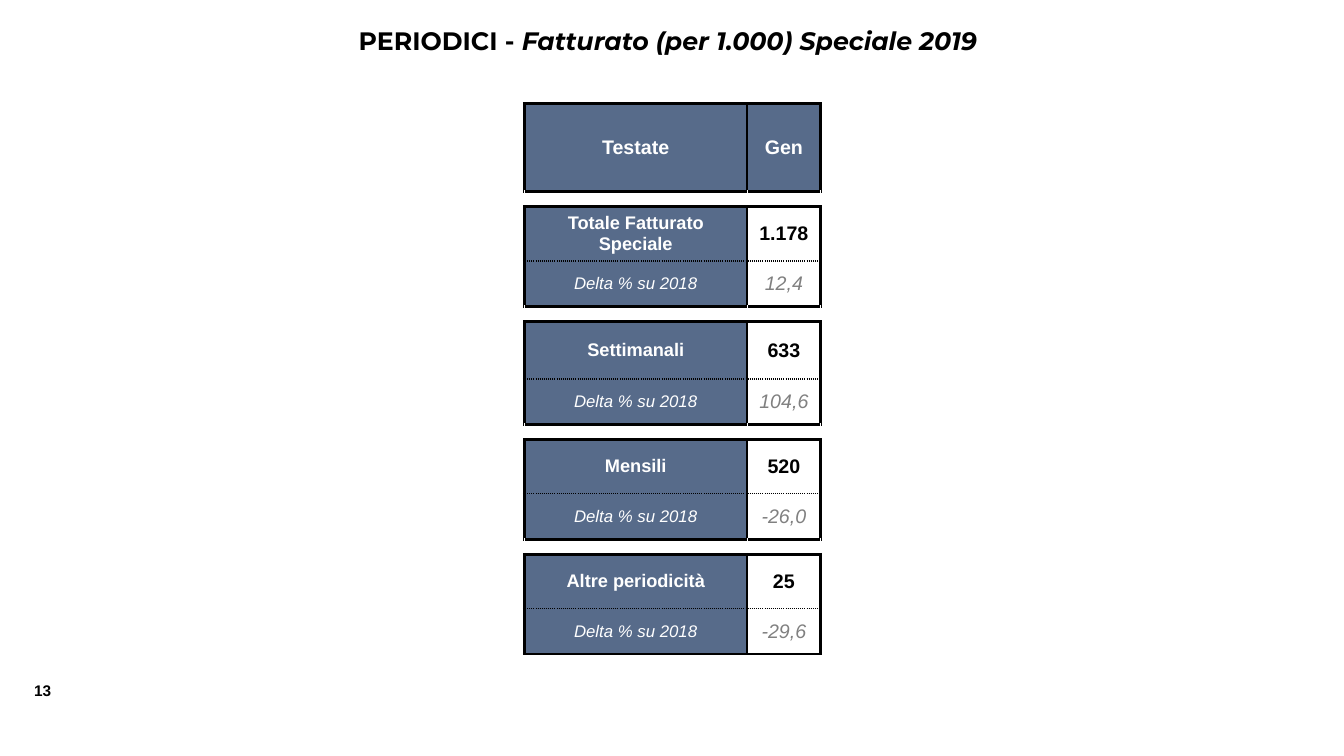
from lxml import etree
from pptx import Presentation
from pptx import util as u
from pptx.dml.color import RGBColor
from pptx.enum import text
from pptx.oxml.ns import qn

WIDTH, HEIGHT = 13.33, 7.5
BLUE, WHITE, BLACK, GREY = "576B8A", "FFFFFF", "000000", "808080"
TITLE = [("PERIODICI - ", False), ("Fatturato (per 1.000) Speciale 2019", True)]
PAGE = "13"
HEADER = ("Testate", "Gen")
DELTA = "Delta % su 2018"
GROUPS = [
    ("Totale Fatturato Speciale", "1.178", "12,4", 0.54),
    ("Settimanali", "633", "104,6", 0.57),
    ("Mensili", "520", "-26,0", 0.54),
    ("Altre periodicità", "25", "-29,6", 0.54),
]
COLUMNS = (2.21, 0.73)
HEADER_ROW, GAP_ROW, DELTA_ROW = 0.87, 0.15, 0.45
SOLID, DOTTED = (2.25, "solid"), (1, "sysDot")


def color(value):
    return RGBColor.from_string(value)


def set_font(font, size, value, bold=True, italic=False, name="Arial"):
    font.name, font.size, font.color.rgb = name, u.Pt(size), color(value)
    font.bold, font.italic = bold, italic


def set_borders(cell, sides):
    properties = cell._tc.get_or_add_tcPr()
    for side in "LRTB":
        if side in sides:
            width, dash = sides[side]
            line = etree.SubElement(properties, qn(f"a:ln{side}"), w=str(u.Pt(width)))
            fill = etree.SubElement(line, qn("a:solidFill"))
            etree.SubElement(fill, qn("a:srgbClr"), val=BLACK)
            etree.SubElement(line, qn("a:prstDash"), val=dash)


def fill_cell(cell, words, background, size, value, sides, margins, **style):
    set_borders(cell, sides)
    cell.fill.solid()
    cell.fill.fore_color.rgb = color(background)
    cell.vertical_anchor = text.MSO_ANCHOR.MIDDLE
    cell.margin_left = cell.margin_right = u.Inches(margins[0])
    cell.margin_top = cell.margin_bottom = u.Inches(margins[1])
    cell.text = words
    paragraph = cell.text_frame.paragraphs[0]
    paragraph.alignment = text.PP_ALIGN.CENTER
    set_font(paragraph.font, size, value, **style)


def add_title(slide):
    title = slide.shapes.title
    title.left, title.top = u.Inches(1.9), u.Inches(0.2)
    title.width, title.height = u.Inches(9.45), u.Inches(0.4)
    frame = title.text_frame
    frame.auto_size = text.MSO_AUTO_SIZE.NONE
    frame.vertical_anchor = text.MSO_ANCHOR.MIDDLE
    paragraph = frame.paragraphs[0]
    paragraph.alignment = text.PP_ALIGN.CENTER
    for words, italic in TITLE:
        run = paragraph.add_run()
        run.text = words
        set_font(run.font, 18, BLACK, italic=italic, name="Montserrat")


def add_page_number(slide):
    box = slide.shapes.add_textbox(u.Inches(0.24), u.Inches(6.71), u.Inches(0.42), u.Inches(0.29))
    box.text_frame.word_wrap = False
    paragraph = box.text_frame.paragraphs[0]
    paragraph.text = PAGE
    set_font(paragraph.font, 11, BLACK)


def add_revenue_table(slide):
    heights = [HEADER_ROW]
    for group in GROUPS:
        heights += [GAP_ROW, group[3], DELTA_ROW]
    shape = slide.shapes.add_table(
        len(heights), len(COLUMNS), u.Inches(5.2), u.Inches(1.03),
        u.Inches(sum(COLUMNS)), u.Inches(sum(heights)))
    table = shape.table
    table.first_row = table.horz_banding = False
    for column, width in zip(table.columns, COLUMNS):
        column.width = u.Inches(width)
    for row, height in zip(table.rows, heights):
        row.height = u.Inches(height)

    frame = dict.fromkeys("LRTB", SOLID)
    upper, lower = {**frame, "B": DOTTED}, {**frame, "T": DOTTED}
    label_margins, no_margins = (0.1, 0.05), (0, 0)
    for column, words in enumerate(HEADER):
        fill_cell(table.cell(0, column), words, BLUE, 14, WHITE, frame, label_margins)
    for index, (name, revenue, delta, _) in enumerate(GROUPS):
        gap = 1 + 3 * index
        for column in range(len(COLUMNS)):
            fill_cell(table.cell(gap, column), "", WHITE, 1, BLACK,
                      {"T": SOLID, "B": SOLID}, no_margins)
        fill_cell(table.cell(gap + 1, 0), name, BLUE, 13, WHITE, upper, label_margins)
        fill_cell(table.cell(gap + 1, 1), revenue, WHITE, 14, BLACK, upper, no_margins)
        fill_cell(table.cell(gap + 2, 0), DELTA, BLUE, 12, WHITE, lower, label_margins,
                  bold=False, italic=True)
        fill_cell(table.cell(gap + 2, 1), delta, WHITE, 14, GREY, lower, no_margins,
                  bold=False, italic=True)


def main():
    presentation = Presentation()
    presentation.slide_width, presentation.slide_height = u.Inches(WIDTH), u.Inches(HEIGHT)
    slide = presentation.slides.add_slide(presentation.slide_layouts[5])
    add_page_number(slide)
    add_title(slide)
    add_revenue_table(slide)
    presentation.save("out.pptx")


if __name__ == "__main__":
    main()
